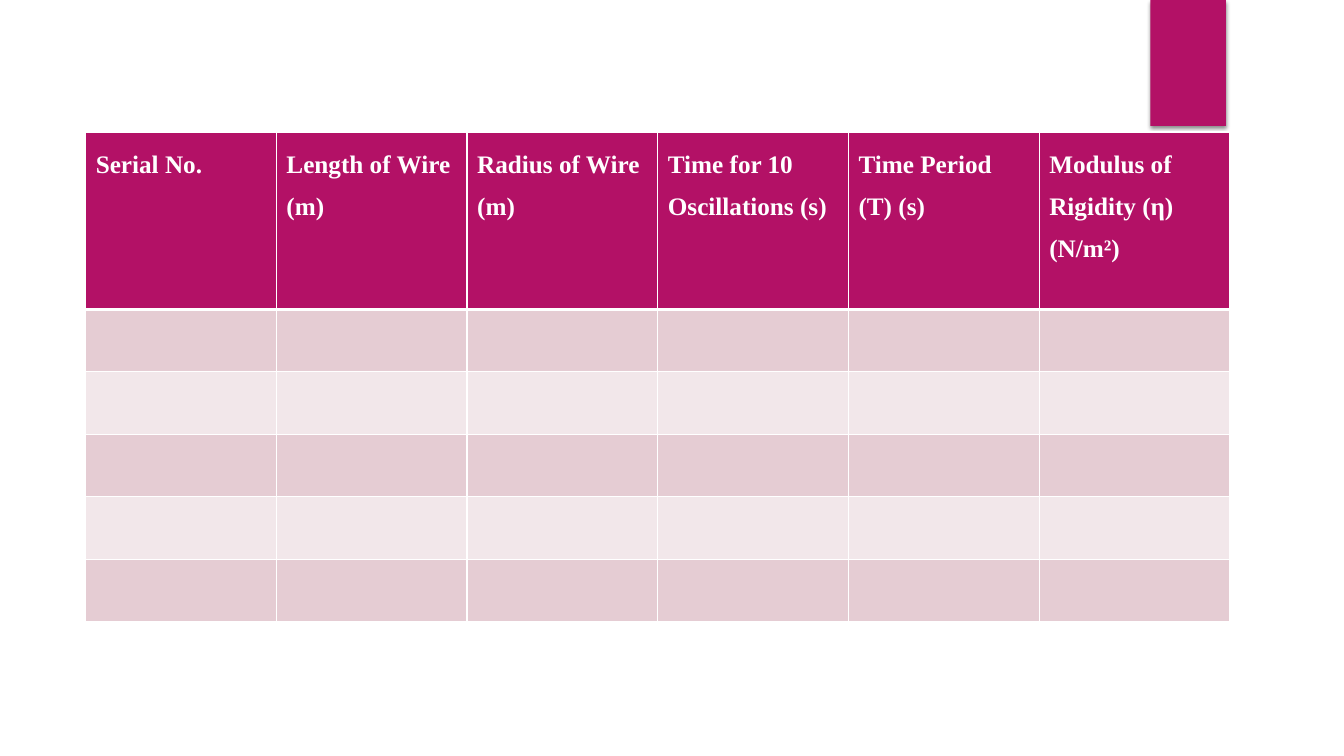
import pptx
import pptx.dml.color
import pptx.enum.shapes
import pptx.oxml
import pptx.oxml.ns
import pptx.util
from pptx.util import Inches

MAGENTA = pptx.dml.color.RGBColor(0xB3, 0x11, 0x66)
ROSE = pptx.dml.color.RGBColor(0xE5, 0xCC, 0xD3)
PALE_ROSE = pptx.dml.color.RGBColor(0xF2, 0xE7, 0xEA)
WHITE = pptx.dml.color.RGBColor(0xFF, 0xFF, 0xFF)
BLACK = pptx.dml.color.RGBColor(0x00, 0x00, 0x00)

HEADINGS = [
    "Serial No.",
    "Length of Wire (m)",
    "Radius of Wire (m)",
    "Time for 10 Oscillations (s)",
    "Time Period (T) (s)",
    "Modulus of Rigidity (η) (N/m²)",
]
READING_COUNT = 5


class SlideBuilder:
    """Draws styled elements on the current slide."""

    def __init__(self, slide):
        self.slide = slide
        self.font_name = "Times New Roman"
        self.font_size = pptx.util.Pt(18)
        self.line_spacing = 1.5

    def add_tab(self, left, top, width, height):
        shape = self.slide.shapes.add_shape(
            pptx.enum.shapes.MSO_SHAPE.RECTANGLE,
            Inches(left), Inches(top), Inches(width), Inches(height))
        shape.fill.solid()
        shape.fill.fore_color.rgb = MAGENTA
        shape.line.fill.background()
        shape.shadow.inherit = False
        effects = shape._element.spPr.find(pptx.oxml.ns.qn("a:effectLst"))
        effects.append(pptx.oxml.parse_xml(
            f'<a:outerShdw {pptx.oxml.ns.nsdecls("a")} blurRad="{pptx.util.Pt(3)}" '
            f'dist="{pptx.util.Pt(2)}" dir="5400000" rotWithShape="0">'
            f'<a:srgbClr val="{BLACK}"><a:alpha val="45000"/></a:srgbClr></a:outerShdw>'))

    def style_cell(self, cell, color, top_width, bottom_width):
        properties = cell._tc.get_or_add_tcPr()
        widths = {"lnL": 1, "lnR": 1, "lnT": top_width, "lnB": bottom_width}
        for side, width in widths.items():
            properties.append(pptx.oxml.parse_xml(
                f'<a:{side} {pptx.oxml.ns.nsdecls("a")} w="{pptx.util.Pt(width)}">'
                f'<a:solidFill><a:srgbClr val="{WHITE}"/></a:solidFill></a:{side}>'))
        cell.fill.solid()
        cell.fill.fore_color.rgb = color

    def write_heading(self, cell, text):
        paragraph = cell.text_frame.paragraphs[0]
        paragraph.line_spacing = self.line_spacing
        run = paragraph.add_run()
        run.text = text
        run.font.name = self.font_name
        run.font.size = self.font_size
        run.font.bold = True
        run.font.color.rgb = WHITE

    def add_readings_table(self, left, top, width, header_height, row_height):
        height = header_height + READING_COUNT * row_height
        table = self.slide.shapes.add_table(
            READING_COUNT + 1, len(HEADINGS),
            Inches(left), Inches(top), Inches(width), Inches(height)).table
        for column in table.columns:
            column.width = Inches(width / len(HEADINGS))
        for index, row in enumerate(table.rows):
            row.height = Inches(row_height if index else header_height)
            color = (ROSE if index % 2 else PALE_ROSE) if index else MAGENTA
            for cell in row.cells:
                self.style_cell(cell, color, 3 if index == 1 else 1, 1 if index else 3)
        for column_index, heading in enumerate(HEADINGS):
            self.write_heading(table.cell(0, column_index), heading)


def main():
    presentation = pptx.Presentation()
    presentation.slide_width = Inches(13.33)
    presentation.slide_height = Inches(7.5)
    builder = SlideBuilder(presentation.slides.add_slide(presentation.slide_layouts[6]))
    builder.add_tab(11.41, 0, 0.75, 1.25)
    builder.add_readings_table(0.85, 1.31, 11.35, 1.76, 0.62)
    presentation.save("out.pptx")


if __name__ == "__main__":
    main()
